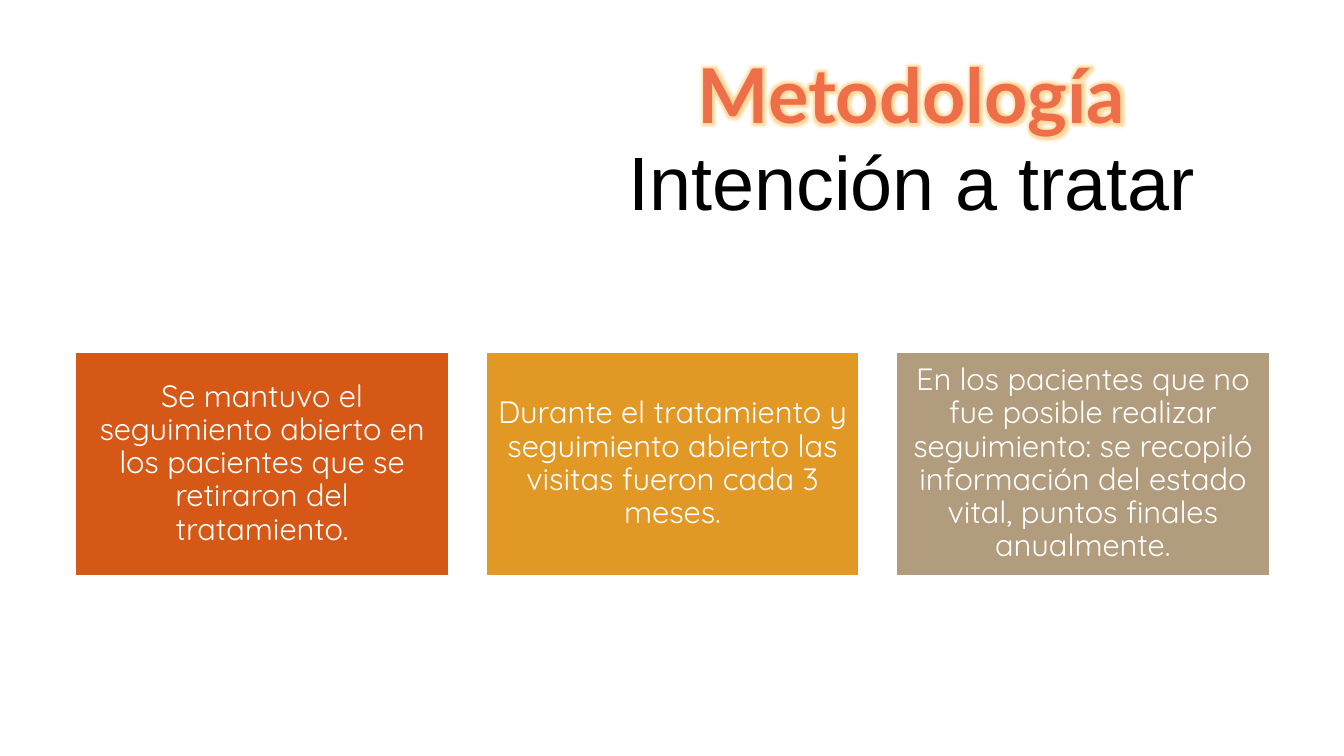
import pptx
import pptx.util
import pptx.dml.color
import pptx.enum.shapes
import pptx.enum.text
import pptx.oxml
import pptx.oxml.ns
from pptx.util import Inches

RGBColor = pptx.dml.color.RGBColor
WHITE = RGBColor(0xFF, 0xFF, 0xFF)
BLACK = RGBColor(0x00, 0x00, 0x00)
CORAL = RGBColor(0xEE, 0x6E, 0x4A)
GLOW = RGBColor(0xFF, 0xC0, 0x5A)
ORANGE = RGBColor(0xD5, 0x58, 0x16)
AMBER = RGBColor(0xE1, 0x98, 0x25)
TAN = RGBColor(0xB1, 0x9C, 0x7D)

CARDS = [
    ("Se mantuvo el seguimiento abierto en los pacientes que se retiraron "
     "del tratamiento.", ORANGE),
    ("Durante el tratamiento y seguimiento abierto las visitas fueron cada "
     "3 meses.", AMBER),
    ("En los pacientes que no fue posible realizar seguimiento: se recopiló "
     "información del estado vital, puntos finales anualmente.", TAN),
]
CARD_LEFT, CARD_TOP = 0.75, 3.49
CARD_WIDTH, CARD_HEIGHT = 3.7, 2.22
CARD_STEP = 4.07


def write_text(shape, text, size, font, color, bold=False):
    """Put one centred paragraph in the shape and return it with its run."""
    frame = shape.text_frame
    frame.word_wrap = True
    frame.vertical_anchor = pptx.enum.text.MSO_ANCHOR.MIDDLE
    para = frame.paragraphs[0]
    para.alignment = pptx.enum.text.PP_ALIGN.CENTER
    span = para.add_run()
    span.text = text
    span.font.size = pptx.util.Pt(size)
    span.font.name = font
    span.font.bold = bold
    span.font.color.rgb = color
    return para, span


def add_heading(page, text, left, top, width, font, color, bold=False):
    box = page.shapes.add_textbox(
        Inches(left), Inches(top), Inches(width), Inches(0.87))
    return write_text(box, text, 54, font, color, bold)[1]


def add_glow(span, color, radius):
    """Give the letters a soft halo, placed right after their fill."""
    effects = pptx.oxml.parse_xml(
        f'<a:effectLst {pptx.oxml.ns.nsdecls("a")}>'
        f'<a:glow rad="{pptx.util.Pt(radius)}"><a:srgbClr val="{color}">'
        '<a:alpha val="60000"/></a:srgbClr></a:glow></a:effectLst>')
    fill = span.font.fill._xPr.find(pptx.oxml.ns.qn("a:solidFill"))
    fill.addnext(effects)


def add_card(page, text, left, color):
    card = page.shapes.add_shape(
        pptx.enum.shapes.MSO_SHAPE.RECTANGLE, Inches(left), Inches(CARD_TOP),
        Inches(CARD_WIDTH), Inches(CARD_HEIGHT))
    card.shadow.inherit = False
    card.fill.solid()
    card.fill.fore_color.rgb = color
    card.line.color.rgb = WHITE
    card.line.width = pptx.util.Pt(1)
    frame = card.text_frame
    frame.margin_left = frame.margin_right = Inches(0.09)
    frame.margin_top = frame.margin_bottom = Inches(0.09)
    para, _ = write_text(card, text, 22, "Quicksand", WHITE)
    para.line_spacing = 0.9


def main():
    deck = pptx.Presentation()
    deck.slide_width, deck.slide_height = Inches(13.33), Inches(7.5)
    page = deck.slides.add_slide(deck.slide_layouts[6])

    # Three cards in a row
    for index, (text, color) in enumerate(CARDS):
        add_card(page, text, CARD_LEFT + index * CARD_STEP, color)

    # Title and subtitle
    title = add_heading(page, "Metodología", 4.77, 0.49, 8.54, "Lato", CORAL, True)
    add_glow(title, GLOW, 8)
    add_heading(page, "Intención a tratar", 5.13, 1.35, 7.83, "Arial", BLACK)

    deck.save("out.pptx")


if __name__ == "__main__":
    main()
